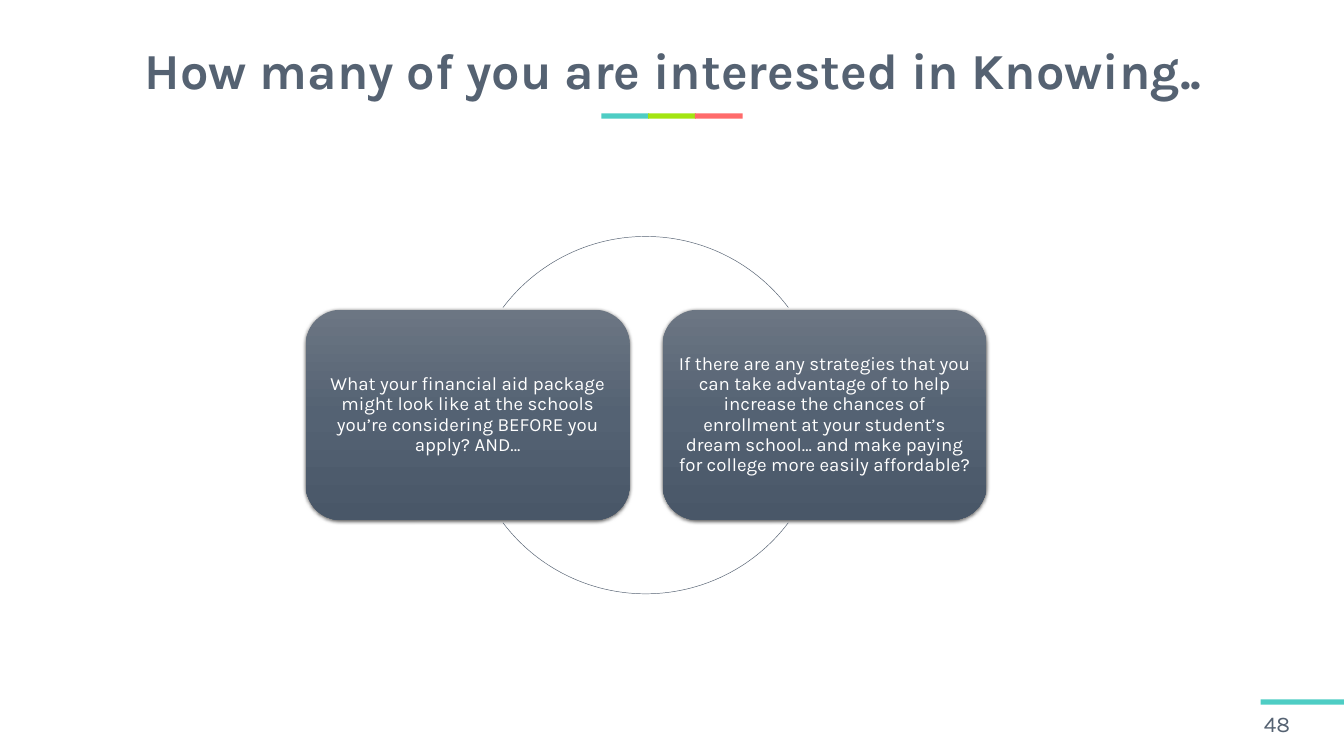
from dataclasses import dataclass

from lxml.etree import SubElement
from pptx import Presentation
from pptx.dml.color import RGBColor
from pptx.enum.shapes import MSO_SHAPE as Preset
from pptx.enum.text import MSO_ANCHOR as Anchor, MSO_AUTO_SIZE as AutoSize, PP_ALIGN as Align
from pptx.oxml import parse_xml
from pptx.oxml.ns import nsdecls, qn
from pptx.util import Cm, Pt


@dataclass(frozen=True)
class Theme:
    font: str = "Karla"
    slate: str = "556272"
    white: str = "FFFFFF"
    teal: str = "4ECDC4"
    lime: str = "A3E511"
    coral: str = "FF6B6B"
    card_stops: tuple = ((0, "6C7683"), (50, "546273"), (100, "495768"))
    title_size: int = 54
    number_size: int = 24
    card_size: int = 20


THEME = Theme()


def write(frame, text, *, size, color, bold=False, align=Align.LEFT, spacing=None, inset=None):
    """Put one formatted paragraph into a text frame, centred vertically."""
    frame.word_wrap = True
    frame.auto_size = AutoSize.NONE
    frame.vertical_anchor = Anchor.MIDDLE
    if inset is not None:
        frame.margin_left = frame.margin_right = Cm(inset)
        frame.margin_top = frame.margin_bottom = Cm(inset)
    paragraph = frame.paragraphs[0]
    paragraph.alignment = align
    if spacing:
        paragraph.line_spacing = spacing
    run = paragraph.add_run()
    run.text = text
    run.font.name = THEME.font
    run.font.size = Pt(size)
    run.font.bold = bold
    run.font.color.rgb = RGBColor.from_string(color)


class SlideBuilder:
    def __init__(self, slide, theme):
        self.slide = slide
        self.theme = theme

    def preset(self, kind, left, top, width, height):
        shape = self.slide.shapes.add_shape(kind, Cm(left), Cm(top), Cm(width), Cm(height))
        shape.shadow.inherit = False
        return shape

    def title(self, text, left, top, width, height):
        title = self.slide.shapes.title
        title.left, title.top, title.width, title.height = map(Cm, (left, top, width, height))
        write(title.text_frame, text, size=self.theme.title_size, color=self.theme.slate,
              bold=True, align=Align.CENTER, spacing=0.9)

    def bar(self, color, left, top, width, height=0.2):
        bar = self.preset(Preset.RECTANGLE, left, top, width, height)
        bar.fill.solid()
        bar.fill.fore_color.rgb = RGBColor.from_string(color)
        bar.line.fill.background()

    def page_number(self, text, left, top, width, height):
        box = self.slide.shapes.add_textbox(Cm(left), Cm(top), Cm(width), Cm(height))
        write(box.text_frame, text, size=self.theme.number_size, color=self.theme.slate)

    def arc(self, left, top, diameter, start, end):
        """Arc of a circle; angles in degrees, clockwise from the right."""
        arc = self.preset(Preset.ARC, left, top, diameter, diameter)
        for i, degrees in enumerate((start, end)):
            arc.adjustments[i] = degrees * 60000 / 100000
        arc.fill.background()
        arc.line.color.rgb = RGBColor.from_string(self.theme.slate)
        arc.line.width = Pt(0.5)

    def card(self, text, left, top, width, height):
        card = self.preset(Preset.ROUNDED_RECTANGLE, left, top, width, height)
        card.line.fill.background()
        self.shade(card)
        self.drop_shadow(card)
        write(card.text_frame, text, size=self.theme.card_size, color=self.theme.white,
              align=Align.CENTER, spacing=0.9, inset=0.2)

    def shade(self, shape):
        """Three-stop gradient running from top to bottom."""
        stops = "".join(
            f'<a:gs pos="{position * 1000}"><a:srgbClr val="{color}"/></a:gs>'
            for position, color in self.theme.card_stops)
        gradient = parse_xml(
            f'<a:gradFill {nsdecls("a")} rotWithShape="1"><a:gsLst>{stops}</a:gsLst>'
            '<a:lin ang="5400000" scaled="0"/></a:gradFill>')
        shape._element.spPr.find(qn("a:prstGeom")).addnext(gradient)

    def drop_shadow(self, shape):
        effects = shape._element.spPr.find(qn("a:effectLst"))
        shadow = SubElement(effects, qn("a:outerShdw"), blurRad=str(Pt(4.5)),
                            dist=str(Pt(1.5)), dir="5400000", algn="ctr", rotWithShape="0")
        black = SubElement(shadow, qn("a:srgbClr"), val="000000")
        SubElement(black, qn("a:alpha"), val="63000")


def main():
    prs = Presentation()
    prs.slide_width, prs.slide_height = Cm(50.8), Cm(28.58)
    title_only = prs.slide_layouts[5]
    builder = SlideBuilder(prs.slides.add_slide(title_only), THEME)

    # Title with its three-colour underline
    builder.title("How many of you are interested in Knowing..", 1.37, 0.97, 48.16, 3.56)
    for i, color in enumerate((THEME.teal, THEME.lime, THEME.coral)):
        builder.bar(color, 22.73 + i * 1.77, 4.29, 1.8)

    # Page number in the corner
    builder.bar(THEME.teal, 47.65, 26.44, 3.15)
    builder.page_number("48", 47.52, 26.67, 3.28, 1.35)

    # Cycle: two questions joined by arcs above and below
    questions = (
        "What your financial aid package might look like at the schools "
        "you’re considering BEFORE you apply? AND…",
        "If there are any strategies that you can take advantage of to help increase "
        "the chances of enrollment at your student’s dream school… and make paying "
        "for college more easily affordable?",
    )
    for i, question in enumerate(questions):
        builder.card(question, 11.56 + i * 13.49, 11.71, 12.24, 7.95)
    tilt = 37
    for start, end in ((180 + tilt, 360 - tilt), (tilt, 180 - tilt)):
        builder.arc(17.65, 8.94, 13.51, start, end)

    prs.save("out.pptx")


if __name__ == "__main__":
    main()
